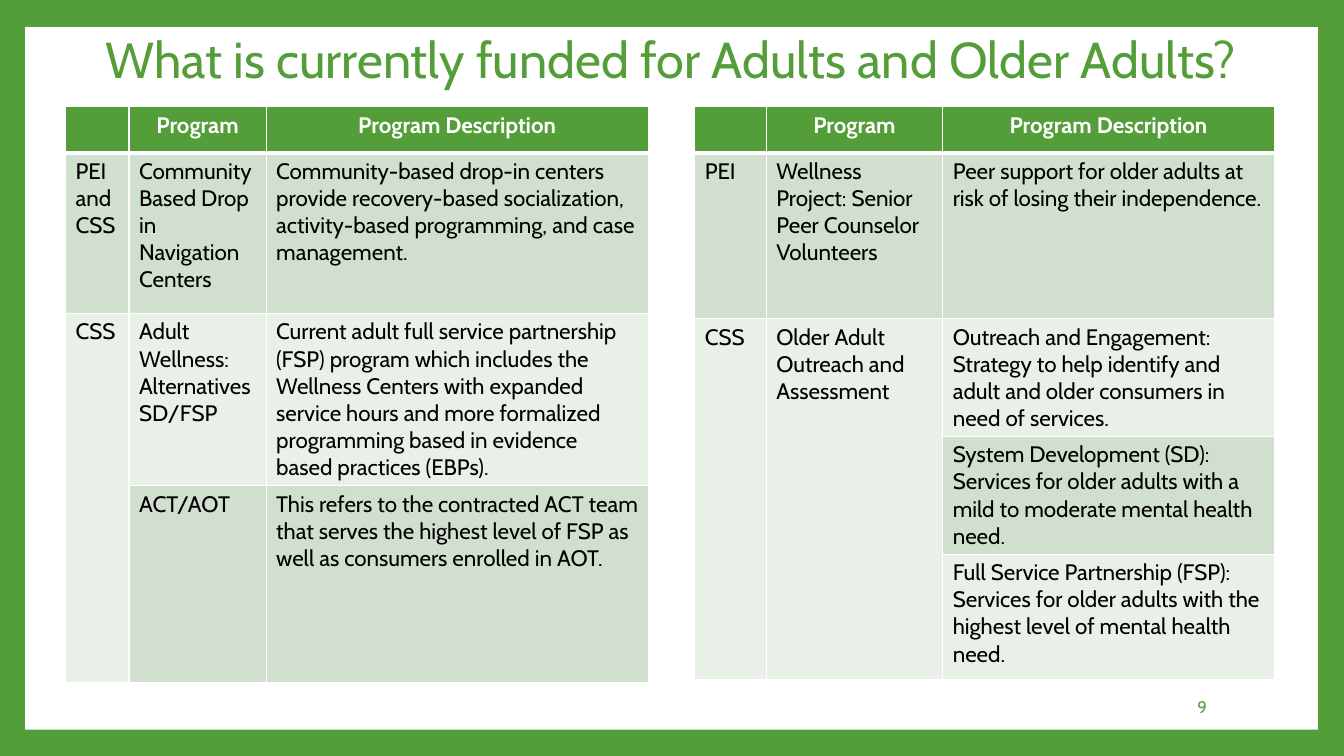
from lxml import etree
from pptx import Presentation
from pptx.dml.color import RGBColor
from pptx.enum.shapes import MSO_SHAPE
from pptx.enum.text import MSO_ANCHOR, MSO_AUTO_SIZE, PP_ALIGN
from pptx.oxml.ns import qn
from pptx.util import Inches, Pt

RECTANGLE = MSO_SHAPE.RECTANGLE
MIDDLE = MSO_ANCHOR.MIDDLE
NO_AUTOFIT = MSO_AUTO_SIZE.NONE
LEFT, CENTER, RIGHT = PP_ALIGN.LEFT, PP_ALIGN.CENTER, PP_ALIGN.RIGHT
FONT = "Cabin"
TITLE_ONLY = 5
COLORS = {
    "green": "549E39",
    "white": "FFFFFF",
    "black": "000000",
    "dark band": "D1DFCE",
    "light band": "E9F0E8",
}
HEADER = ("", "Program", "Program Description")
ADULT_ROWS = [
    HEADER,
    ("PEI and CSS", "Community Based Drop in Navigation Centers",
     "Community-based drop-in centers provide recovery-based socialization, "
     "activity-based programming, and case management."),
    ("CSS", "Adult Wellness: Alternatives SD/FSP",
     "Current adult full service partnership (FSP) program which includes the "
     "Wellness Centers with expanded service hours and more formalized "
     "programming based in evidence based practices (EBPs)."),
    ("", "ACT/AOT",
     "This refers to the contracted ACT team that serves the highest level of "
     "FSP as well as consumers enrolled in AOT."),
]
OLDER_ADULT_ROWS = [
    HEADER,
    ("PEI", "Wellness Project: Senior Peer Counselor Volunteers",
     "Peer support for older adults at risk of losing their independence."),
    ("CSS", "Older Adult Outreach and Assessment",
     "Outreach and Engagement: Strategy to help identify and adult and older "
     "consumers in need of services."),
    ("", "",
     "System Development (SD): Services for older adults with a mild to "
     "moderate mental health need."),
    ("", "",
     "Full Service Partnership (FSP): Services for older adults with the "
     "highest level of mental health need."),
]


def rgb(name):
    """Return the named colour."""
    return RGBColor.from_string(COLORS[name])


def write(frame, text, size, color, align, bold=False):
    """Put one formatted paragraph in a text frame."""
    frame.text = text
    para = frame.paragraphs[0]
    para.alignment = align
    for span in para.runs:
        span.font.name = FONT
        span.font.size = Pt(size)
        span.font.bold = bold
        span.font.color.rgb = rgb(color)


def add_background(page, left, top, width, height):
    """Draw the white panel inside the green border."""
    page.background.fill.solid()
    page.background.fill.fore_color.rgb = rgb("green")
    panel = page.shapes.add_shape(
        RECTANGLE, Inches(left), Inches(top), Inches(width), Inches(height))
    panel.shadow.inherit = False
    panel.fill.solid()
    panel.fill.fore_color.rgb = rgb("white")
    panel.line.fill.background()
    page.shapes._spTree.insert(2, panel._element)


def add_title(page, text, left, top, width, height):
    """Place the title placeholder."""
    title = page.shapes.title
    title.left, title.top = Inches(left), Inches(top)
    title.width, title.height = Inches(width), Inches(height)
    frame = title.text_frame
    frame.auto_size = NO_AUTOFIT
    frame.vertical_anchor = MIDDLE
    write(frame, text, 36, "green", CENTER)
    frame.paragraphs[0].line_spacing = 0.9


def add_page_number(page, number, left, top, width, height):
    """Write the page number at the lower right."""
    box = page.shapes.add_textbox(
        Inches(left), Inches(top), Inches(width), Inches(height))
    frame = box.text_frame
    frame.word_wrap = True
    frame.vertical_anchor = MIDDLE
    write(frame, str(number), 12, "green", RIGHT)


def set_borders(cell, bottom, top):
    """Give a cell white borders, with widths in points."""
    properties = cell._tc.get_or_add_tcPr()
    for side, points in (("L", 1), ("R", 1), ("T", top), ("B", bottom)):
        line = etree.SubElement(properties, qn(f"a:ln{side}"), w=str(Pt(points)))
        fill = etree.SubElement(line, qn("a:solidFill"))
        etree.SubElement(fill, qn("a:srgbClr"), val=COLORS["white"])


def add_program_table(page, left, top, widths, heights, rows, merged_columns):
    """Build a program table whose last group spans rows 2 onward."""
    table = page.shapes.add_table(
        len(rows), len(widths), Inches(left), Inches(top),
        Inches(sum(widths)), Inches(sum(heights))).table
    for column, width in zip(table.columns, widths):
        column.width = Inches(width)
    for row, height in zip(table.rows, heights):
        row.height = Inches(height)
    for row_index, texts in enumerate(rows):
        header = row_index == 0
        band = "green" if header else ("light band", "dark band")[row_index % 2]
        for column_index, text in enumerate(texts):
            cell = table.cell(row_index, column_index)
            set_borders(cell, 3 if header else 1, 3 if row_index == 1 else 1)
            cell.fill.solid()
            cell.fill.fore_color.rgb = rgb(band)
            write(cell.text_frame, text, 16, "white" if header else "black",
                  CENTER if header else LEFT, header)
    for column_index in range(merged_columns):
        table.cell(2, column_index).merge(table.cell(len(rows) - 1, column_index))


def main():
    """Build and save the slide."""
    deck = Presentation()
    deck.slide_width, deck.slide_height = Inches(13.33), Inches(7.5)
    page = deck.slides.add_slide(deck.slide_layouts[TITLE_ONLY])
    add_background(page, 0.25, 0.27, 12.82, 6.97)
    add_title(page, "What is currently funded for Adults and Older Adults?",
              0.65, 0.18, 12, 0.88)
    add_page_number(page, 9, 10.2, 6.81, 1.87, 0.4)
    add_program_table(page, 0.65, 1.06, (0.63, 1.36, 3.79),
                      (0.46, 1.59, 1.71, 1.95), ADULT_ROWS, 1)
    add_program_table(page, 6.89, 1.06, (0.71, 1.75, 3.29),
                      (0.46, 1.64, 1.17, 1.17, 1.24), OLDER_ADULT_ROWS, 2)
    deck.save("out.pptx")


if __name__ == "__main__":
    main()
